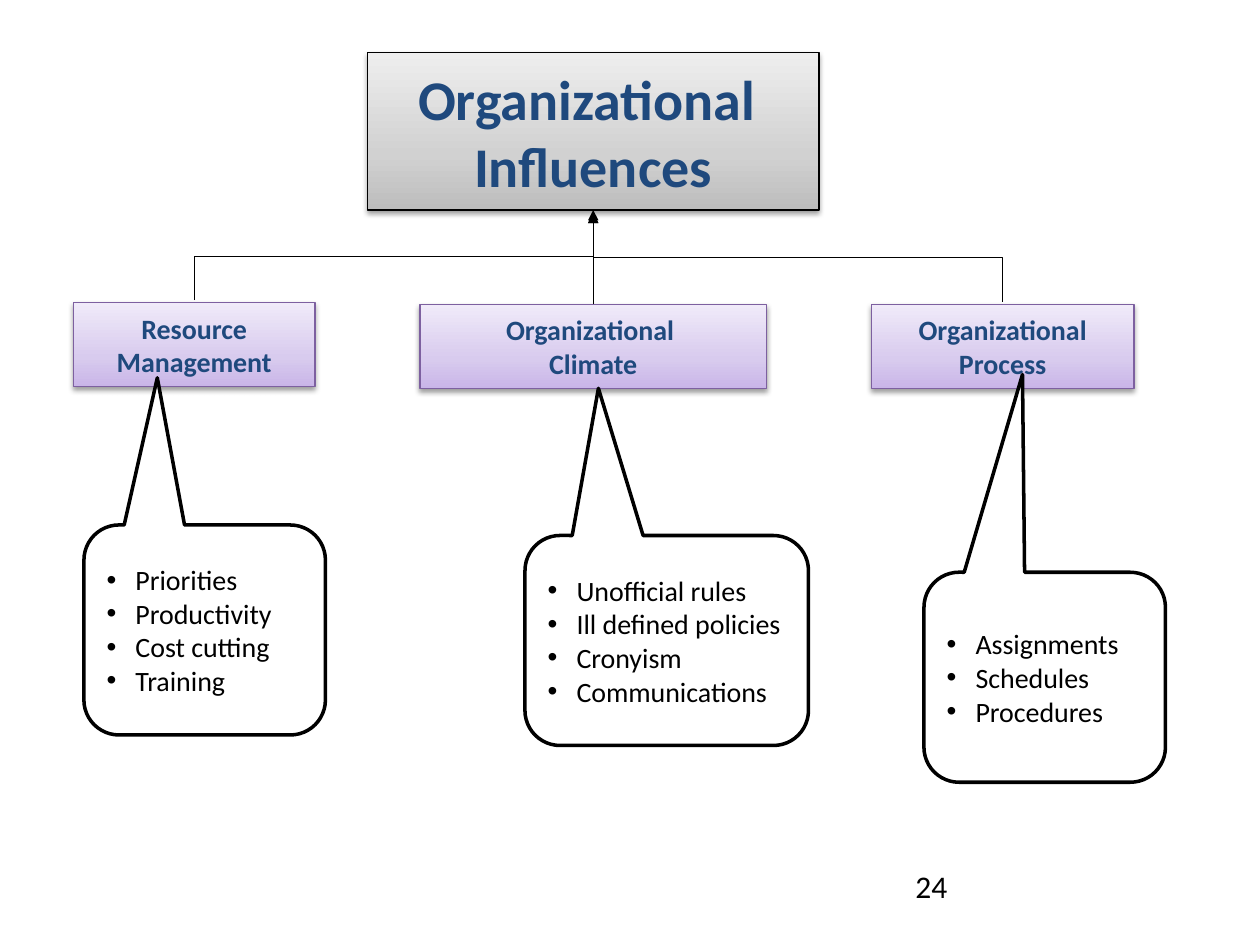
from lxml import etree
from pptx import Presentation
from pptx.dml.color import RGBColor
from pptx.enum.shapes import MSO_CONNECTOR, MSO_SHAPE
from pptx.enum.text import MSO_ANCHOR, PP_ALIGN
from pptx.oxml.ns import qn
from pptx.util import Pt

RECT = MSO_SHAPE.RECTANGLE
CALLOUT = MSO_SHAPE.ROUNDED_RECTANGULAR_CALLOUT
STRAIGHT, ELBOW = MSO_CONNECTOR.STRAIGHT, MSO_CONNECTOR.ELBOW
MIDDLE = MSO_ANCHOR.MIDDLE
CENTER, LEFT = PP_ALIGN.CENTER, PP_ALIGN.LEFT
TOP_SIDE, BOTTOM_SIDE = 0, 2

FONT = "Calibri"
NAVY, BLACK, WHITE, PURPLE = "1F497D", "000000", "FFFFFF", "7D60A0"
# Gradient stops run from the bottom edge to the top edge
GRAYS = [(0, "BDBDBD"), (35, "D1D1D1"), (100, "EEEEEE")]
LILACS = [(0, "C9B5E8"), (35, "D8CBEE"), (100, "F0EAF9")]

# Factor: label lines, box, callout box, callout tip, bullet points
FACTORS = [
    (["Resource", "Management"], (42, 173, 138, 48),
     (48, 300, 138, 120), (-0.196, -1.201),
     ["Priorities", "Productivity", "Cost cutting", "Training"]),
    (["Organizational", "Process"], (498, 174, 150, 48),
     (528, 327, 138, 120), (-0.092, -1.442),
     ["Assignments", "Schedules", "Procedures"]),
    (["Organizational ", "Climate"], (240, 174, 198, 48),
     (300, 306, 162, 120), (-0.241, -1.201),
     ["Unofficial rules", "Ill defined policies", "Cronyism", "Communications"]),
]


def rgb(color):
    return RGBColor.from_string(color)


def points(values):
    return [Pt(value) for value in values]


def add_run(paragraph, text, size, color, bold=False):
    run = paragraph.add_run()
    run.text = text
    run.font.name = FONT
    run.font.size = Pt(size)
    run.font.bold = bold
    run.font.color.rgb = rgb(color)


def set_outline(line, color, width):
    line.color.rgb = rgb(color)
    line.width = Pt(width)


def set_gradient(shape, stops):
    shape.fill.gradient()
    shape.fill.gradient_angle = 90
    stop_list = shape._element.spPr.find(".//" + qn("a:gsLst"))
    for stop in list(stop_list):
        stop_list.remove(stop)
    for percent, color in stops:
        stop = etree.SubElement(stop_list, qn("a:gs"), pos=str(percent * 1000))
        etree.SubElement(stop, qn("a:srgbClr"), val=color)


def set_shadow(shape):
    shape.shadow.inherit = False
    effects = shape._element.spPr.find(qn("a:effectLst"))
    shadow = etree.SubElement(
        effects, qn("a:outerShdw"), blurRad=str(Pt(3.1)), dist=str(Pt(1.6)),
        dir="5400000", rotWithShape="0")
    color = etree.SubElement(shadow, qn("a:srgbClr"), val=BLACK)
    etree.SubElement(color, qn("a:alpha"), val="38000")


def add_label_box(slide, box, lines, size, stops, outline):
    shape = slide.shapes.add_shape(RECT, *points(box))
    set_gradient(shape, stops)
    set_outline(shape.line, outline, 0.75)
    set_shadow(shape)
    shape.text_frame.vertical_anchor = MIDDLE
    paragraph = shape.text_frame.paragraphs[0]
    paragraph.alignment = CENTER
    for index, text in enumerate(lines):
        if index:
            paragraph.add_line_break()
        add_run(paragraph, text, size, NAVY, bold=True)
    return shape


def set_bullet(paragraph, indent):
    props = paragraph._p.get_or_add_pPr()
    props.set("marL", str(Pt(indent)))
    props.set("indent", str(-Pt(indent)))
    etree.SubElement(props, qn("a:buFont"), typeface="Arial")
    etree.SubElement(props, qn("a:buChar"), char="•")


def add_callout(slide, box, tip, items):
    shape = slide.shapes.add_shape(CALLOUT, *points(box))
    for index, value in enumerate((*tip, 0.167)):
        shape.adjustments[index] = value
    shape.fill.solid()
    shape.fill.fore_color.rgb = rgb(WHITE)
    set_outline(shape.line, BLACK, 2)
    shape.shadow.inherit = False
    frame = shape.text_frame
    frame.vertical_anchor = MIDDLE
    for index, item in enumerate(items):
        paragraph = frame.add_paragraph() if index else frame.paragraphs[0]
        paragraph.alignment = LEFT
        set_bullet(paragraph, 16.5)
        add_run(paragraph, item, 16, BLACK)


def style_arrow(connector):
    set_outline(connector.line, BLACK, 0.75)
    etree.SubElement(connector.line._get_or_add_ln(), qn("a:tailEnd"), type="triangle")
    etree.SubElement(connector._element.spPr, qn("a:effectLst"))


def add_straight_arrow(slide, source, target):
    connector = slide.shapes.add_connector(STRAIGHT, 0, 0, 0, 0)
    connector.begin_connect(source, TOP_SIDE)
    connector.end_connect(target, BOTTOM_SIDE)
    style_arrow(connector)


def add_elbow_arrow(slide, start, end):
    """Draw an up-across-up elbow as a quarter-turned elbow connector."""
    (x1, y1), (x2, y2) = start, end
    mid_x, mid_y = (x1 + x2) / 2, (y1 + y2) / 2
    half_rise, half_span = (y1 - y2) / 2, abs(x2 - x1) / 2
    from_left = x1 < x2
    side = -half_rise if from_left else half_rise
    connector = slide.shapes.add_connector(ELBOW, *points(
        (mid_x + side, mid_y - half_span, mid_x - side, mid_y + half_span)))
    turn = 270 if from_left else 90
    connector._element.spPr.find(qn("a:xfrm")).set("rot", str(turn * 60000))
    style_arrow(connector)


def add_page_number(slide, box, number):
    frame = slide.shapes.add_textbox(*points(box)).text_frame
    frame.word_wrap = True
    add_run(frame.paragraphs[0], number, 18, BLACK)


def main():
    prs = Presentation()
    prs.slide_width, prs.slide_height = Pt(720), Pt(540)
    slide = prs.slides.add_slide(prs.slide_layouts[6])

    add_page_number(slide, (516, 492, 168, 37.5), "24")

    # Heading and the three factors below it
    heading = add_label_box(slide, (210, 30, 258, 90),
                            ["Organizational ", "Influences"], 32, GRAYS, BLACK)
    resource, process, climate = [
        add_label_box(slide, box, lines, 16, LILACS, PURPLE)
        for lines, box, *_ in FACTORS]

    # Arrows from the factors up to the heading
    gap = 1.5
    heading_foot = (339, 120 + gap)
    for factor in (resource, process):
        top_middle = ((factor.left + factor.width / 2) / Pt(1), factor.top / Pt(1) - gap)
        add_elbow_arrow(slide, top_middle, heading_foot)
    add_straight_arrow(slide, climate, heading)

    # Callouts with examples, from left to right
    for _, _, box, tip, items in sorted(FACTORS, key=lambda factor: factor[2]):
        add_callout(slide, box, tip, items)

    prs.save("out.pptx")


if __name__ == "__main__":
    main()
